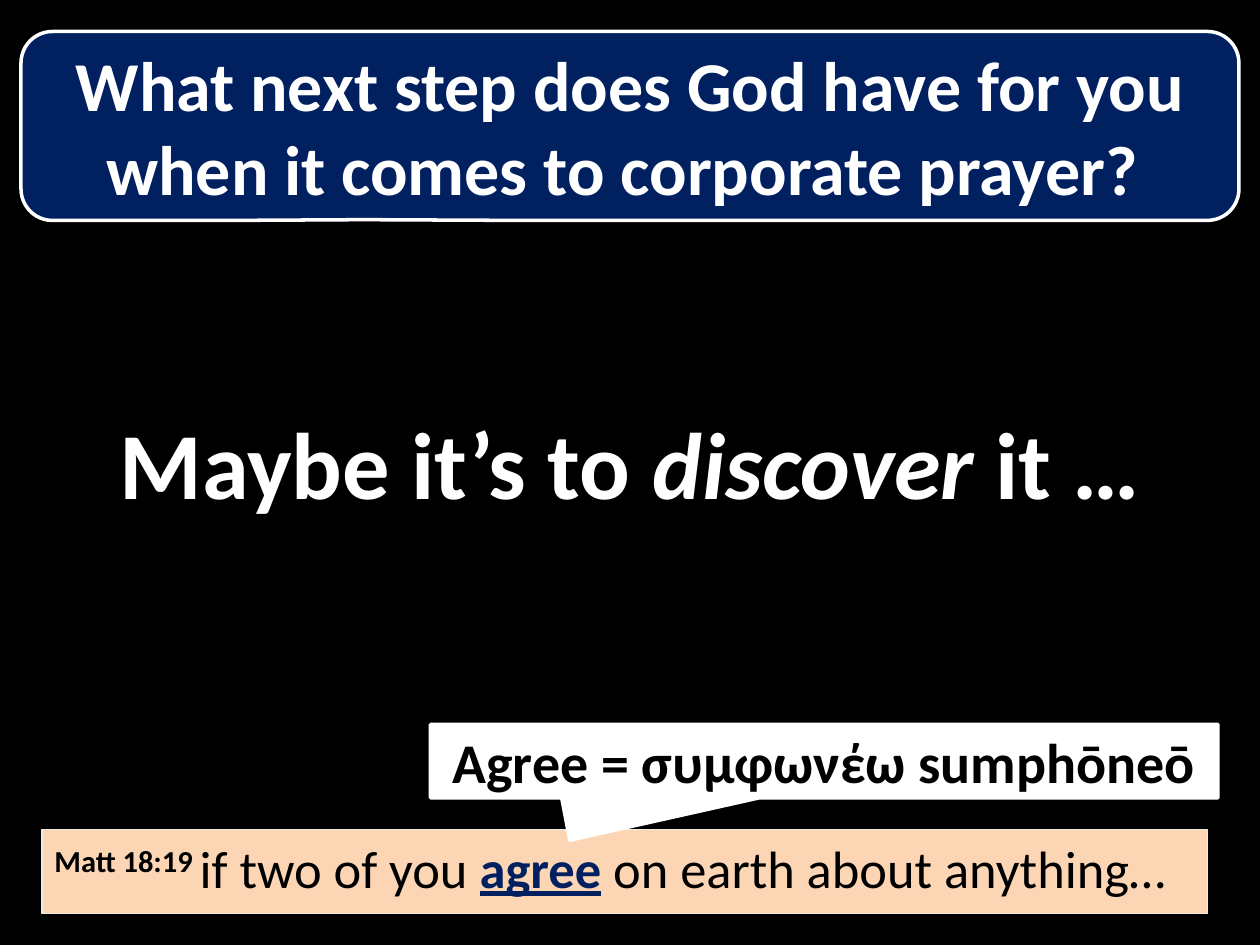
import pptx
import pptx.util
import pptx.dml.color
import pptx.enum.shapes
import pptx.enum.text

COLORS = {
    "background": "000000",
    "navy": "002060",
    "white": "FFFFFF",
    "black": "000000",
    "peach": "FCD5B5",
    "cream": "EEECE1",
}
SHAPES = pptx.enum.shapes.MSO_SHAPE
ANCHORS = pptx.enum.text.MSO_ANCHOR
ALIGNMENTS = pptx.enum.text.PP_ALIGN
COLUMNS, ROWS = 120, 90
ROUND_CALLOUT = (-0.219, 0.496, 0.167)


def rgb(name):
    return pptx.dml.color.RGBColor.from_string(COLORS[name])


def add_box(slide, kind, box, adjustments=(), fill=None, line=None, line_width=2):
    """Add a preset shape at (column, row, columns wide, rows high)."""
    cell = pptx.util.Inches(10) / COLUMNS
    shape = slide.shapes.add_shape(kind, *(round(length * cell) for length in box))
    shape.shadow.inherit = False
    for index, value in enumerate(adjustments):
        shape.adjustments[index] = value
    if fill:
        shape.fill.solid()
        shape.fill.fore_color.rgb = rgb(fill)
    else:
        shape.fill.background()
    if line:
        shape.line.color.rgb = rgb(line)
        shape.line.width = pptx.util.Pt(line_width)
    else:
        shape.line.fill.background()
    return shape


def write(shape, runs, size, color, anchor=ANCHORS.MIDDLE, alignment=ALIGNMENTS.CENTER):
    """Write one paragraph from (text, format values) pairs."""
    frame = shape.text_frame
    frame.word_wrap = True
    frame.vertical_anchor = anchor
    paragraph = frame.paragraphs[0]
    paragraph.alignment = alignment
    for text, changes in runs:
        values = {"name": "Calibri", "size": pptx.util.Pt(size), "bold": True, **changes}
        run = paragraph.add_run()
        run.text = text
        run.font.color.rgb = rgb(values.pop("color", color))
        baseline = values.pop("baseline", None)
        if baseline:
            run._r.get_or_add_rPr().set("baseline", str(baseline * 1000))
        for attribute, value in values.items():
            setattr(run.font, attribute, value)


def add_question(slide, box):
    shape = add_box(slide, SHAPES.ROUNDED_RECTANGULAR_CALLOUT, box,
                    ROUND_CALLOUT, "navy", "white")
    question = "What next step does God have for you when it comes to corporate prayer? "
    write(shape, [(question, {})], 40, "white")


def add_answer(slide, box):
    shape = add_box(slide, SHAPES.ROUNDED_RECTANGULAR_CALLOUT, box, ROUND_CALLOUT)
    runs = [("Maybe it’s to ", {}), ("discover", {"italic": True}), (" it …", {})]
    write(shape, runs, 54, "white")


def add_verse(slide, box):
    shape = add_box(slide, SHAPES.RECTANGLE, box, (), "peach", "cream", 0.75)
    runs = [
        ("Matt 18:19 ", {"baseline": 30}),
        ("if two of you ", {"bold": False}),
        ("agree", {"color": "navy", "underline": True}),
        (" on earth about anything…", {"bold": False}),
    ]
    write(shape, runs, 30, "black", ANCHORS.TOP, ALIGNMENTS.LEFT)


def add_word_note(slide, box):
    shape = add_box(slide, SHAPES.RECTANGULAR_CALLOUT, box,
                    (-0.323, 1.075), "white", "white")
    write(shape, [("Agree = συμφωνέω sumphōneō", {})], 32, "black")


def main():
    presentation = pptx.Presentation()
    presentation.slide_width = pptx.util.Inches(10)
    presentation.slide_height = pptx.util.Inches(7.5)
    slide = presentation.slides.add_slide(presentation.slide_layouts[6])
    slide.background.fill.solid()
    slide.background.fill.fore_color.rgb = rgb("background")

    # Question and answer share one width and height
    add_question(slide, (2, 3, COLUMNS - 4, 18))
    add_answer(slide, (2, 35, COLUMNS - 4, 18))

    # Verse strip, with the note pointing at its key word
    add_verse(slide, (4, ROWS - 11, 111, 8))
    add_word_note(slide, (41, ROWS - 21, 75, 7))

    presentation.save("out.pptx")


if __name__ == "__main__":
    main()
